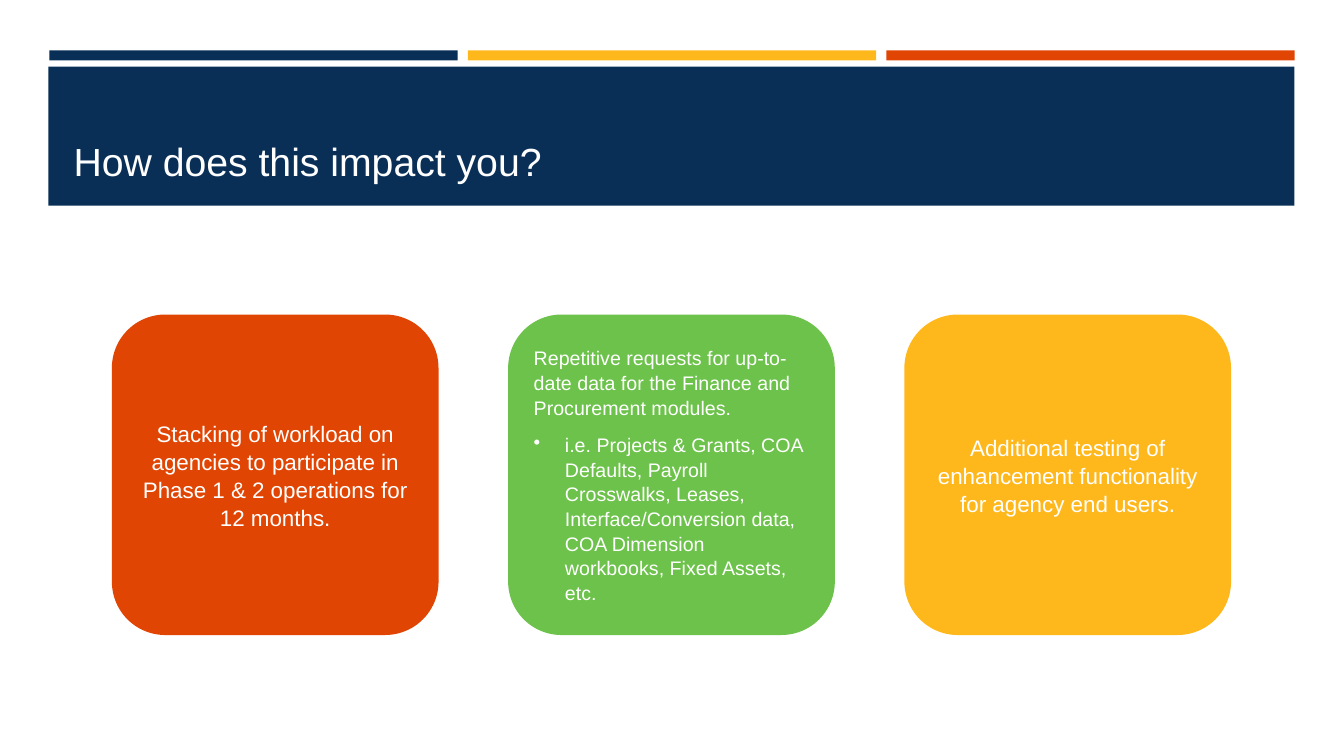
from lxml import etree
from pptx import Presentation
from pptx.dml.color import RGBColor
from pptx.enum.shapes import MSO_SHAPE
from pptx.enum.text import MSO_ANCHOR, MSO_AUTO_SIZE, PP_ALIGN
from pptx.oxml.ns import qn
from pptx.util import Inches, Pt

RECT, ROUND = MSO_SHAPE.RECTANGLE, MSO_SHAPE.ROUNDED_RECTANGLE
LEFT, CENTER = PP_ALIGN.LEFT, PP_ALIGN.CENTER
NAVY, GOLD, ORANGE, GREEN, WHITE = "092F57", "FFB81C", "E14504", "6CC24A", "FFFFFF"


def add_block(kind, x, y, w, h, color):
    sp = s.shapes.add_shape(kind, Inches(x), Inches(y), Inches(w), Inches(h))
    sp.shadow.inherit = False
    sp.fill.solid()
    sp.fill.fore_color.rgb = RGBColor.from_string(color)
    sp.line.fill.background()
    return sp


def style(p, size, align):
    p.alignment = align
    p.font.name = "Arial"
    p.font.size = Pt(size)
    p.font.color.rgb = RGBColor.from_string(WHITE)


prs = Presentation()
prs.slide_width, prs.slide_height = Inches(13.33), Inches(7.5)
s = prs.slides.add_slide(prs.slide_layouts[5])

# Header: three accent bars above the title band
for i, color in enumerate((NAVY, GOLD, ORANGE)):
    add_block(RECT, 0.49 + i * 4.15, 0.5, 4.05, 0.1, color)
add_block(RECT, 0.48, 0.66, 12.36, 1.38, NAVY)

title = s.shapes.title
title.left, title.top = Inches(0.63), Inches(0.8)
title.width, title.height = Inches(12.06), Inches(1.08)
tf = title.text_frame
tf.text = "How does this impact you?"
tf.vertical_anchor = MSO_ANCHOR.BOTTOM
tf.auto_size = MSO_AUTO_SIZE.NONE
style(tf.paragraphs[0], 28, LEFT)
title.element.getparent().append(title.element)  # bring in front of the band

# Impact cards: colour, text size, alignment, paragraphs
cards = [
    (ORANGE, 16, CENTER, [
        "Stacking of workload on agencies to participate in "
        "Phase 1 & 2 operations for 12 months."]),
    (GREEN, 14, LEFT, [
        "Repetitive requests for up-to-date data for the Finance "
        "and Procurement modules.",
        "i.e. Projects & Grants, COA Defaults, Payroll Crosswalks, Leases, "
        "Interface/Conversion data, COA Dimension workbooks, Fixed Assets, etc."]),
    (GOLD, 16, CENTER, [
        "Additional testing of enhancement functionality for agency end users."]),
]
for i, (color, size, align, texts) in enumerate(cards):
    card = add_block(ROUND, 1.11 + i * 3.93, 3.12, 3.24, 3.18, color)
    tf = card.text_frame
    tf.word_wrap = True
    tf.vertical_anchor = MSO_ANCHOR.MIDDLE
    tf.text = "\n".join(texts)
    for p in tf.paragraphs:
        style(p, size, align)
        p.line_spacing = 1.05
        p.space_before = Pt(0 if i == 0 else 9)
    for p in tf.paragraphs[1:]:
        pPr = p._p.get_or_add_pPr()
        pPr.set("marL", str(Inches(0.31)))
        pPr.set("indent", str(Inches(-0.31)))
        bullet = etree.Element(qn("a:buChar"), char="•")
        pPr.find(qn("a:defRPr")).addprevious(bullet)

prs.save("out.pptx")
